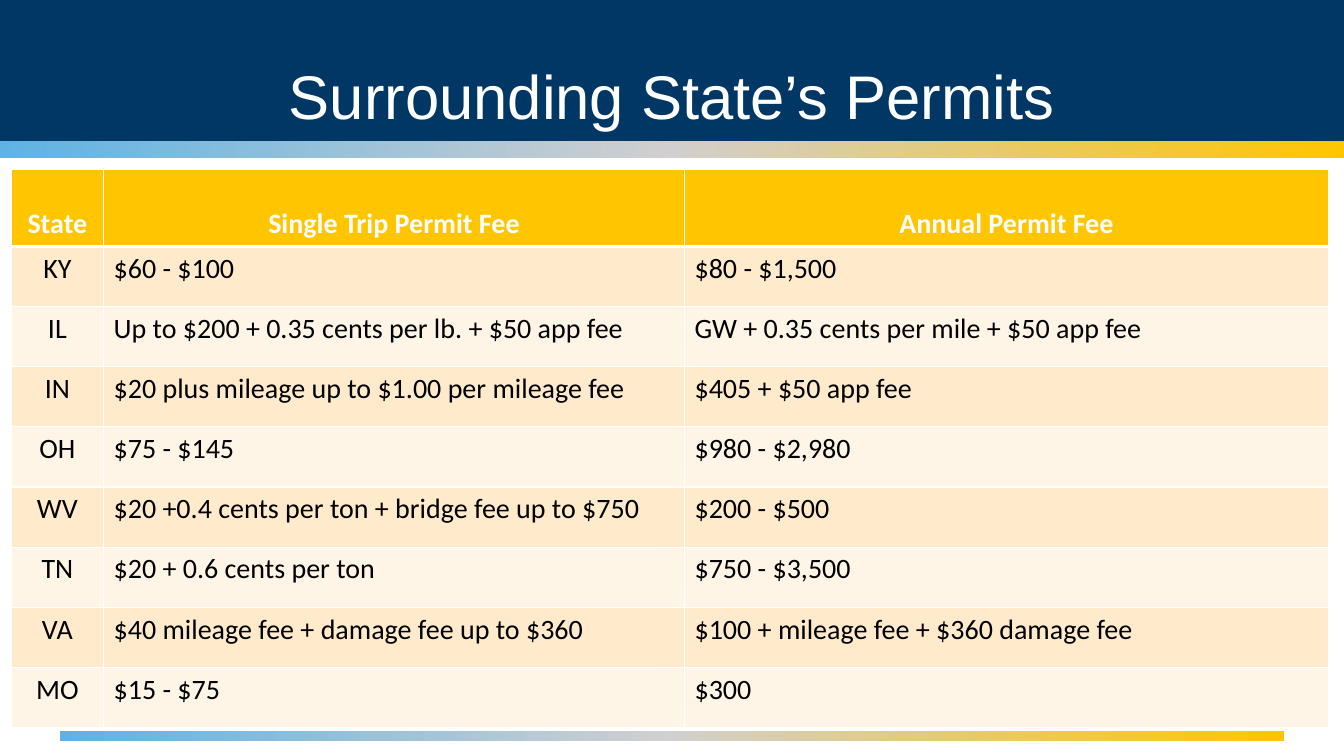
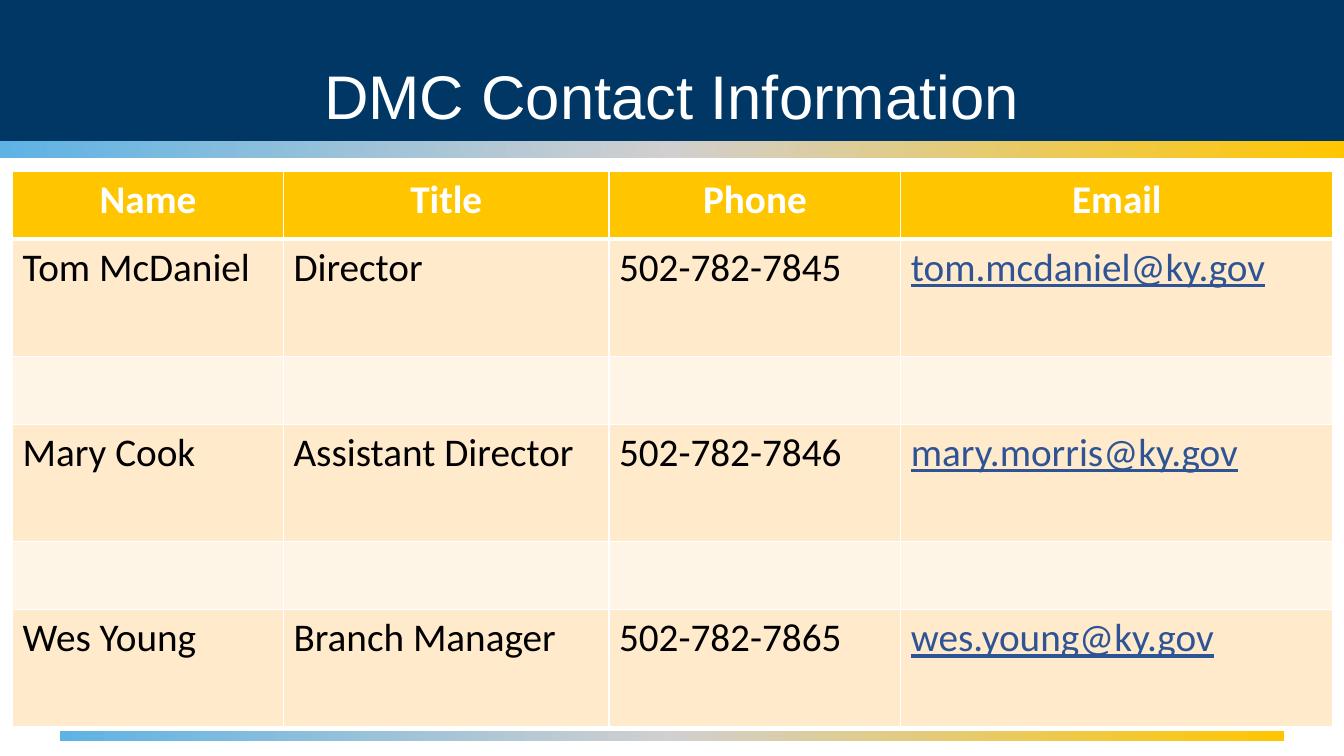
from copy import deepcopy
from dataclasses import dataclass

from pptx import Presentation
from pptx.dml.color import RGBColor
from pptx.enum.shapes import MSO_SHAPE as Form
from pptx.enum.text import MSO_ANCHOR as Anchor, PP_ALIGN as Align
from pptx.oxml import parse_xml
from pptx.oxml.ns import nsdecls, qn
from pptx.util import Pt


@dataclass(frozen=True)
class Theme:
    navy: str = "003764"
    sky: str = "5EB3E4"
    grey: str = "D1CFCF"
    gold: str = "FFC600"
    cream: str = "FFEACC"
    pale: str = "FFF5E7"
    white: str = "FFFFFF"
    black: str = "000000"
    link: str = "2F5496"
    head: str = "Arial"
    body: str = "Calibri"
    title: int = 44


theme = Theme()
rgb = RGBColor.from_string


def style(para, face, size, color, align, bold=False):
    para.alignment = align
    font = para.font
    font.name, font.size, font.bold = face, Pt(size), bold
    font.color.rgb = rgb(color)


def edge(cell, base):
    """White rules round a cell; base is the width of the bottom rule."""
    props = cell._tc.get_or_add_tcPr()
    for at, (side, width) in enumerate(zip("LRTB", (1, 1, 1, base))):
        props.insert(at, parse_xml(
            f'<a:ln{side} {nsdecls("a")} w="{Pt(width)}"><a:solidFill>'
            f'<a:srgbClr val="{theme.white}"/></a:solidFill></a:ln{side}>'))


# Content: column widths, row heights and wording of each table
sheets = [
    dict(
        title="Surrounding State’s Permits", size=20, left=8, top=121,
        cols=(66, 415, 460), high=[55] + [43] * 8,
        anchor=Anchor.BOTTOM, center="State", links=None,
        rows=[
            ("State", "Single Trip Permit Fee", "Annual Permit Fee"),
            ("KY", "$60 - $100", "$80 - $1,500"),
            ("IL", "Up to $200 + 0.35 cents per lb. + $50 app fee",
             "GW + 0.35 cents per mile + $50 app fee"),
            ("IN", "$20 plus mileage up to $1.00 per mileage fee",
             "$405 + $50 app fee"),
            ("OH", "$75 - $145", "$980 - $2,980"),
            ("WV", "$20 +0.4 cents per ton + bridge fee up to $750",
             "$200 - $500"),
            ("TN", "$20 + 0.6 cents per ton", "$750 - $3,500"),
            ("VA", "$40 mileage fee + damage fee up to $360",
             "$100 + mileage fee + $360 damage fee"),
            ("MO", "$15 - $75", "$300"),
        ]),
    dict(
        title="DMC Contact Information", size=28, left=9, top=122.5,
        cols=(193.5, 232.5, 208.5, 308.5), high=[48.4, 83.8] * 3,
        anchor=Anchor.TOP, center=None, links="Email",
        rows=[
            ("Name", "Title", "Phone", "Email"),
            ("Tom McDaniel", "Director", "502-782-7845",
             "tom.mcdaniel@ky.gov"),
            ("",) * 4,
            ("Mary Cook", "Assistant Director", "502-782-7846",
             "mary.morris@ky.gov"),
            ("",) * 4,
            ("Wes Young", "Branch Manager", "502-782-7865",
             "wes.young@ky.gov"),
        ]),
]

deck = Presentation()
deck.slide_width, deck.slide_height = Pt(960), Pt(540)
layout = deck.slide_layouts[5]
slides = [deck.slides.add_slide(layout) for _ in sheets]

# Shared bands: drawn once, then moved to the layout
blend = (theme.sky, theme.grey, theme.gold)
bands = [
    ((0, 0, 960, 101), (theme.navy,)),
    ((0, 101, 960, 12), blend),
    ((43, 522, 874, 7), blend),
]
for at, (box, hues) in enumerate(bands):
    band = slides[0].shapes.add_shape(Form.RECTANGLE, *map(Pt, box))
    band.shadow.inherit = False
    band.line.fill.background()
    fill = band.fill
    if len(hues) == 1:
        fill.solid()
        fill.fore_color.rgb = rgb(hues[0])
    else:
        fill.gradient()
        fill.gradient_angle = 0
        stops = band.element.spPr.find(".//" + qn("a:gsLst"))
        stops.insert(1, deepcopy(stops[0]))
        for stop, hue, pos in zip(fill.gradient_stops, hues, (0, 0.5, 1)):
            stop.color.rgb = rgb(hue)
            stop.position = pos
    layout.shapes.element.insert(2 + at, band.element)

for slide, sheet in zip(slides, sheets):
    # Title
    title = slide.shapes.title
    title.left, title.top, title.width, title.height = map(
        Pt, (0, 28, 960, 86))
    title.text_frame.text = sheet["title"]
    title.text_frame.vertical_anchor = Anchor.MIDDLE
    para = title.text_frame.paragraphs[0]
    para.line_spacing = 0.9
    style(para, theme.head, theme.title, theme.white, Align.CENTER)

    # Table grid
    rows, cols, high = sheet["rows"], sheet["cols"], sheet["high"]
    frame = slide.shapes.add_table(
        len(rows), len(cols), Pt(sheet["left"]), Pt(sheet["top"]),
        Pt(sum(cols)), Pt(sum(high)))
    table = frame.table
    for col, width in zip(table.columns, cols):
        col.width = Pt(width)
    for row, height in zip(table.rows, high):
        row.height = Pt(height)

    # Table cells
    for r, row in enumerate(rows):
        top = r == 0
        for c, (name, text) in enumerate(zip(rows[0], row)):
            cell = table.cell(r, c)
            cell.text = text
            cell.vertical_anchor = sheet["anchor"] if top else Anchor.TOP
            cell.fill.solid()
            cell.fill.fore_color.rgb = rgb(
                theme.gold if top else theme.cream if r % 2 else theme.pale)
            edge(cell, 3 if top else 1)
            link = not top and name == sheet["links"]
            mid = top or name == sheet["center"]
            color = (theme.white if top else
                     theme.link if link else theme.black)
            para = cell.text_frame.paragraphs[0]
            style(para, theme.body, sheet["size"], color,
                  Align.CENTER if mid else Align.LEFT, top)
            if link:
                para.font.underline = True

deck.save("out.pptx")
